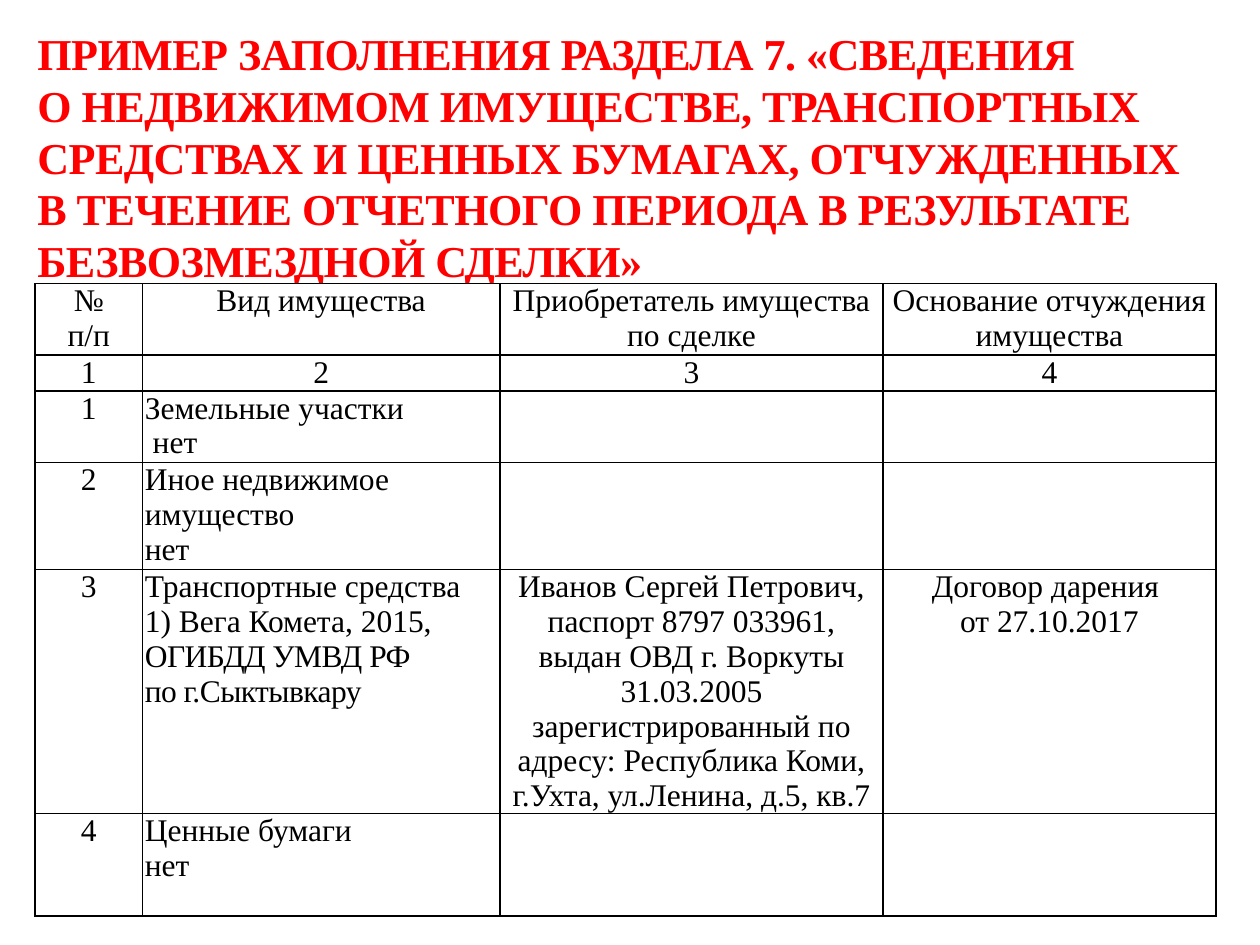
from dataclasses import dataclass

from lxml.etree import SubElement
from pptx import Presentation
from pptx.dml.color import RGBColor
from pptx.enum.text import MSO_ANCHOR as Anchor, MSO_AUTO_SIZE as AutoSize, PP_ALIGN as Align
from pptx.oxml.ns import qn
from pptx.util import Cm, Pt

COLORS = {"title": "FF0000", "text": "000000", "border": "000000", "cell": "FFFFFF"}
FONT = "Times New Roman"
TIGHT = -0.3


@dataclass(frozen=True)
class Span:
    text: str
    size: float = 18
    color: str = "text"
    bold: bool = False
    spacing: float = 0


@dataclass(frozen=True)
class Entry:
    paras: tuple[tuple[Span, ...], ...] = ()
    align: Align = Align.CENTER


def centred(*lines: str) -> Entry:
    return Entry(tuple((Span(line),) for line in lines))


def listed(*lines: str) -> Entry:
    return Entry(centred(*lines).paras, Align.LEFT)


def color(name: str) -> RGBColor:
    return RGBColor.from_string(COLORS[name])


def add_span(para, span: Span) -> None:
    for index, line in enumerate(span.text.split("\n")):
        if index:
            para.add_line_break()
        run = para.add_run()
        run.text = line
        run.font.name = FONT
        run.font.size = Pt(span.size)
        run.font.bold = span.bold
        run.font.color.rgb = color(span.color)
        if span.spacing:
            run._r.get_or_add_rPr().set("spc", str(round(span.spacing * 100)))


def add_borders(cell, width: float = 1) -> None:
    properties = cell._tc.get_or_add_tcPr()
    for index, side in enumerate(("a:lnL", "a:lnR", "a:lnT", "a:lnB")):
        line = SubElement(properties, qn(side), w=str(Pt(width)))
        fill = SubElement(line, qn("a:solidFill"))
        SubElement(fill, qn("a:srgbClr"), val=COLORS["border"])
        properties.insert(index, line)


def fill_cell(cell, entry: Entry) -> None:
    cell.fill.solid()
    cell.fill.fore_color.rgb = color("cell")
    add_borders(cell)
    cell.margin_left = cell.margin_right = Cm(0.05)
    cell.margin_top = cell.margin_bottom = 0
    frame = cell.text_frame
    for index, spans in enumerate(entry.paras):
        para = frame.add_paragraph() if index else frame.paragraphs[0]
        para.alignment = entry.align
        for span in spans:
            add_span(para, span)


def place_title(title, span: Span) -> None:
    title.left, title.top, title.width, title.height = Cm(0.5), Cm(0.03), Cm(24.4), Cm(5.05)
    frame = title.text_frame
    frame.auto_size = AutoSize.NONE
    frame.word_wrap = True
    frame.vertical_anchor = Anchor.TOP
    frame.margin_top = Cm(0.55)
    frame.margin_bottom = 0
    para = frame.paragraphs[0]
    para.alignment = Align.LEFT
    para.line_spacing = 0.98
    add_span(para, span)


def add_grid(page, entries: list[list[Entry]], widths: list[float], heights: list[float]) -> None:
    table = page.shapes.add_table(
        len(heights), len(widths), Cm(0.71), Cm(5.72), Cm(sum(widths)), Cm(sum(heights))
    ).table
    table.first_row = table.horz_banding = False
    for column, width in zip(table.columns, widths):
        column.width = Cm(width)
    for row, height, row_entries in zip(table.rows, heights, entries):
        row.height = Cm(height)
        for cell, entry in zip(row.cells, row_entries):
            fill_cell(cell, entry)


TITLE = Span(
    "ПРИМЕР ЗАПОЛНЕНИЯ РАЗДЕЛА 7. «СВЕДЕНИЯ \n"
    "О НЕДВИЖИМОМ ИМУЩЕСТВЕ, ТРАНСПОРТНЫХ СРЕДСТВАХ И ЦЕННЫХ БУМАГАХ, ОТЧУЖДЕННЫХ \n"
    "В ТЕЧЕНИЕ ОТЧЕТНОГО ПЕРИОДА В РЕЗУЛЬТАТЕ БЕЗВОЗМЕЗДНОЙ СДЕЛКИ»",
    25.2, "title", True, TIGHT,
)
VEHICLE = Entry(
    (
        (Span("Транспортные средства"),),
        (
            Span("1) Вега Комета, 2015, "),
            Span("ОГИБДД УМВД РФ \nпо г.Сыктывкару", spacing=TIGHT),
        ),
    ),
    Align.LEFT,
)
BUYER = centred(
    "Иванов Сергей Петрович, паспорт 8797 033961, выдан ОВД г. Воркуты 31.03.2005 "
    "зарегистрированный по адресу: Республика Коми, г.Ухта, ул.Ленина, д.5, кв.7"
)
EMPTY = Entry()
ENTRIES = [
    [
        centred("№\nп/п"),
        centred("Вид имущества"),
        centred("Приобретатель имущества по сделке"),
        centred("Основание отчуждения имущества"),
    ],
    [centred(str(number)) for number in range(1, 5)],
    [centred("1"), listed("Земельные участки", " нет"), EMPTY, EMPTY],
    [centred("2"), listed("Иное недвижимое имущество", "нет"), EMPTY, EMPTY],
    [centred("3"), VEHICLE, BUYER, centred("Договор дарения ", "от 27.10.2017")],
    [centred("4"), listed("Ценные бумаги", "нет"), EMPTY, EMPTY],
]


def main() -> None:
    deck = Presentation()
    deck.slide_width, deck.slide_height = Cm(25.4), Cm(19.05)
    page = deck.slides.add_slide(deck.slide_layouts[5])
    place_title(page.shapes.title, TITLE)
    add_grid(page, ENTRIES, [2.16, 7.21, 7.72, 6.71], [1.44, 0.72, 1.44, 2.16, 4.22, 2.06])
    deck.save("out.pptx")


if __name__ == "__main__":
    main()
